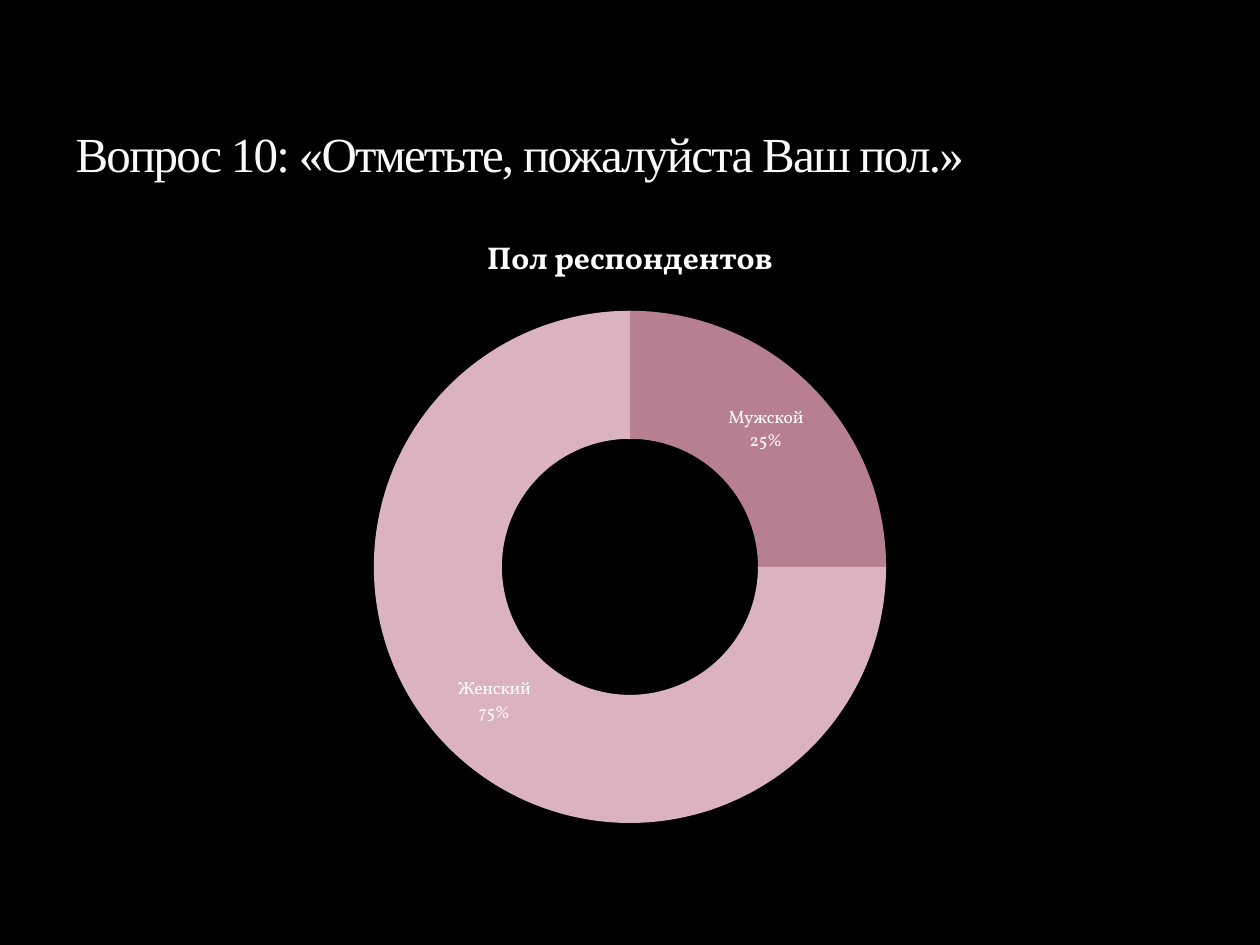
"""Builds a survey slide with a doughnut chart of respondents by sex."""
from dataclasses import dataclass

import pptx
import pptx.chart.data
import pptx.dml.color
import pptx.enum.chart
import pptx.enum.text
import pptx.util
from pptx.util import Inches


@dataclass(frozen=True)
class Theme:
    background: str = "000000"
    title: str = "F9F9F9"
    text: str = "FFFFFF"
    slices: tuple = ("B78091", "DBB2C0")
    title_font: str = "Times New Roman"
    chart_font: str = "Vollkorn"
    title_size: int = 28
    chart_title_size: int = 18
    label_size: int = 10


THEME = Theme()


def rgb(value):
    return pptx.dml.color.RGBColor.from_string(value)


def style_font(font, name, size, color, bold=False):
    font.name = name
    font.size = pptx.util.Pt(size)
    font.bold = bold
    font.color.rgb = rgb(color)


def set_background(s):
    fill = s.background.fill
    fill.solid()
    fill.fore_color.rgb = rgb(THEME.background)


def set_title(s, text):
    sp = s.shapes.title
    sp.left, sp.top = Inches(0.5), Inches(0.17)
    sp.width, sp.height = Inches(9), Inches(1.33)
    tf = sp.text_frame
    tf.word_wrap = True
    tf.vertical_anchor = pptx.enum.text.MSO_ANCHOR.BOTTOM
    p = tf.paragraphs[0]
    p.alignment = pptx.enum.text.PP_ALIGN.LEFT
    r = p.add_run()
    r.text = text
    style_font(r.font, THEME.title_font, THEME.title_size, THEME.title)
    r.font._element.set("spc", "-100")


def set_chart_title(chart, text):
    chart.has_title = True
    chart.chart_title.include_in_layout = False
    r = chart.chart_title.text_frame.paragraphs[0].add_run()
    r.text = text
    style_font(r.font, THEME.chart_font, THEME.chart_title_size, THEME.text, bold=True)


def set_labels(plot):
    plot.has_data_labels = True
    labels = plot.data_labels
    labels.show_category_name = True
    labels.show_percentage = True
    labels.show_value = False
    style_font(labels.font, THEME.chart_font, THEME.label_size, THEME.text)


def add_doughnut(s, name, values):
    data = pptx.chart.data.CategoryChartData()
    data.categories = list(values)
    data.add_series(name, list(values.values()))
    chart = s.shapes.add_chart(
        pptx.enum.chart.XL_CHART_TYPE.DOUGHNUT,
        Inches(0.5), Inches(1.67), Inches(9), Inches(5), data,
    ).chart
    style_font(chart.font, THEME.chart_font, THEME.label_size, THEME.text)
    chart.has_legend = False
    set_chart_title(chart, name)
    plot = chart.plots[0]
    plot.vary_by_categories = True
    set_labels(plot)
    for i, color in enumerate(THEME.slices):
        point = plot.series[0].points[i]
        point.format.fill.solid()
        point.format.fill.fore_color.rgb = rgb(color)
        point.format.line.fill.background()


def main():
    prs = pptx.Presentation()
    prs.slide_width, prs.slide_height = Inches(10), Inches(7.5)
    s = prs.slides.add_slide(prs.slide_layouts[5])
    set_background(s)
    set_title(s, "Вопрос 10: «Отметьте, пожалуйста Ваш пол.»")
    add_doughnut(s, "Пол респондентов", {"Мужской": 25, "Женский": 75})
    prs.save("out.pptx")


if __name__ == "__main__":
    main()
